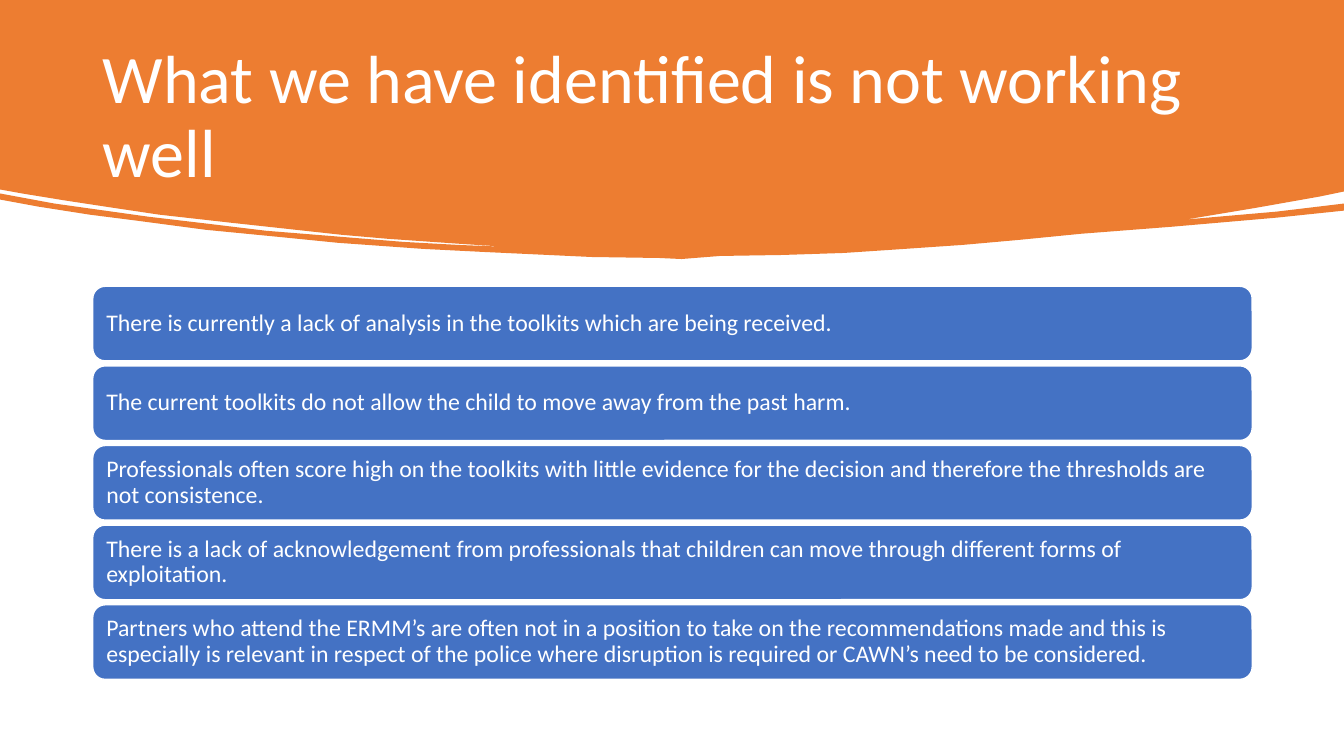
from pptx import Presentation
from pptx import util as u
from pptx.dml.color import RGBColor
from pptx.enum import shapes, text

ORANGE, BLUE, WHITE = "ED7D31", "4472C4", "FFFFFF"
TITLE = "What we have identified is not working well"
FINDINGS = [
    "There is currently a lack of analysis in the toolkits which are being received.",
    "The current toolkits do not allow the child to move away from the past harm.",
    "Professionals often score high on the toolkits with little evidence for the decision "
    "and therefore the thresholds are not consistence.",
    "There is a lack of acknowledgement from professionals that children can move through "
    "different forms of exploitation.",
    "Partners who attend the ERMM’s are often not in a position to take on the recommendations "
    "made and this is especially is relevant in respect of the police where disruption is "
    "required or CAWN’s need to be considered.",
]
BANNER_TOP = [(0, 0), (13.33, 0), (13.33, 1.9), (13.09, 1.95), (12.47, 2.06), (11.75, 2.18)]
RIGHT_STRIPE = [(11.86, 2.17), (12.66, 2.1), (13.33, 2.02), (13.33, 2.09), (12.66, 2.16),
                (11.62, 2.25), (10.72, 2.32)]
LOWER_EDGE = [(10.11, 2.38), (9.55, 2.43), (8.82, 2.48), (8.37, 2.51), (7.76, 2.53),
              (7.14, 2.54), (6.76, 2.57), (6.54, 2.56), (5.87, 2.55), (4.8, 2.5), (4.2, 2.47),
              (3.36, 2.41), (2.76, 2.35), (2.04, 2.28), (1.36, 2.19), (0.89, 2.13),
              (0.38, 2.05), (0, 1.98)]
LEFT_GAP = [(0, 1.92), (0.54, 2.02), (1.04, 2.09), (1.47, 2.15), (2.06, 2.22), (2.64, 2.29),
            (3.26, 2.34), (4, 2.4), (4.54, 2.43), (5.04, 2.45), (4.57, 2.42), (3.85, 2.37),
            (3.39, 2.33), (2.84, 2.27), (2.29, 2.21), (1.58, 2.13), (1.11, 2.06),
            (0.65, 1.99), (0.22, 1.92), (0, 1.88)]


def color(hex_string):
    return RGBColor.from_string(hex_string)


def set_values(target, values):
    for name, value in values.items():
        setattr(target, name, value)


def paint(shape, fill):
    shape.shadow.inherit = False
    shape.fill.solid()
    shape.fill.fore_color.rgb = color(fill)


def write(shape, content, size, space_after=0):
    """Fill a shape with one white, left-aligned, vertically centred paragraph."""
    frame = shape.text_frame
    set_values(frame, {"word_wrap": True, "vertical_anchor": text.MSO_ANCHOR.MIDDLE,
                       "margin_left": u.Inches(0.1), "margin_right": u.Inches(0.1),
                       "margin_top": u.Inches(0.05), "margin_bottom": u.Inches(0.05)})
    paragraph = frame.paragraphs[0]
    set_values(paragraph, {"alignment": text.PP_ALIGN.LEFT, "line_spacing": 0.9,
                           "space_after": u.Pt(space_after)})
    run = paragraph.add_run()
    run.text = content
    set_values(run.font, {"name": "Calibri", "size": u.Pt(size)})
    run.font.color.rgb = color(WHITE)


def add_banner(slide):
    points = [(u.Inches(x), u.Inches(y))
              for x, y in BANNER_TOP + RIGHT_STRIPE + LOWER_EDGE + LEFT_GAP]
    builder = slide.shapes.build_freeform(*points[0])
    builder.add_line_segments(points[1:], close=True)
    banner = builder.convert_to_shape()
    paint(banner, ORANGE)
    banner.line.fill.background()


def add_title(slide):
    box = slide.shapes.add_textbox(u.Inches(0.92), u.Inches(0.44), u.Inches(11.5), u.Inches(1.47))
    write(box, TITLE, 48.6)


def add_finding(slide, top, content):
    card = slide.shapes.add_shape(shapes.MSO_SHAPE.ROUNDED_RECTANGLE, u.Inches(0.92),
                                  u.Inches(top), u.Inches(11.5), u.Inches(0.74))
    paint(card, BLUE)
    card.line.color.rgb = color(WHITE)
    card.line.width = u.Pt(1)
    write(card, content, 17, space_after=6)


def main():
    presentation = Presentation()
    set_values(presentation, {"slide_width": u.Inches(13.33), "slide_height": u.Inches(7.5)})
    slide = presentation.slides.add_slide(presentation.slide_layouts[6])
    add_banner(slide)
    add_title(slide)
    for index, finding in enumerate(FINDINGS):
        add_finding(slide, 2.84 + 0.79 * index, finding)
    presentation.save("out.pptx")


if __name__ == "__main__":
    main()
